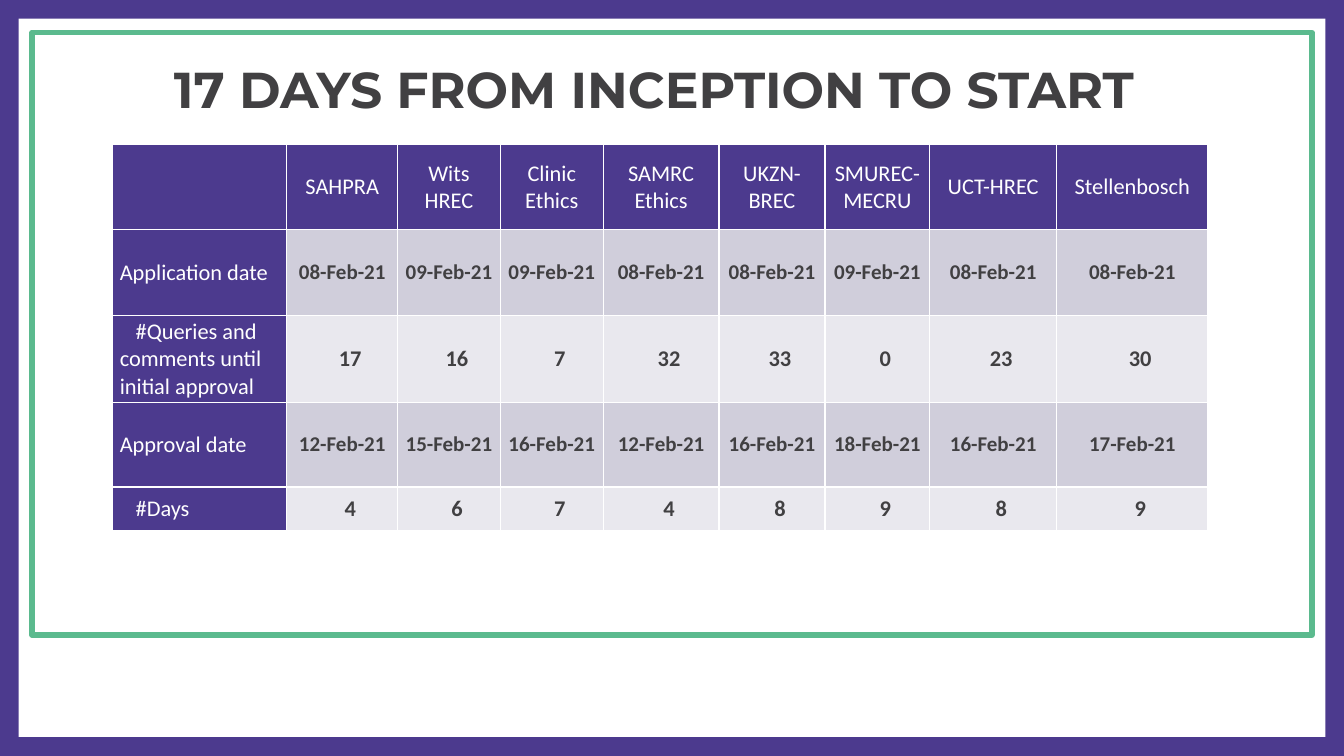
from lxml import etree
from pptx import Presentation
from pptx.dml.color import RGBColor
from pptx.enum.shapes import MSO_SHAPE
from pptx.enum.text import MSO_ANCHOR, PP_ALIGN
from pptx.oxml.ns import qn
from pptx.util import Cm, Pt

RECT = MSO_SHAPE.RECTANGLE
MIDDLE = MSO_ANCHOR.MIDDLE
LEFT, CENTER = PP_ALIGN.LEFT, PP_ALIGN.CENTER

PURPLE = RGBColor(0x4C, 0x3A, 0x8E)
GREEN = RGBColor(0x5B, 0xBA, 0x8E)
WHITE = RGBColor(0xFF, 0xFF, 0xFF)
DARK = RGBColor(0x41, 0x40, 0x42)
BAND_DARK = RGBColor(0xD0, 0xCE, 0xDB)
BAND_LIGHT = RGBColor(0xE9, 0xE8, 0xEE)

# Content
TITLE = "17 DAYS FROM INCEPTION TO START"
ROWS = [
    ["", "SAHPRA", "Wits HREC", "Clinic Ethics", "SAMRC Ethics", "UKZN-BREC",
     "SMUREC- MECRU", "UCT-HREC", "Stellenbosch"],
    ["Application date", "08-Feb-21", "09-Feb-21", "09-Feb-21", "08-Feb-21",
     "08-Feb-21", "09-Feb-21", "08-Feb-21", "08-Feb-21"],
    ["#Queries and comments until initial approval",
     "17", "16", "7", "32", "33", "0", "23", "30"],
    ["Approval date", "12-Feb-21", "15-Feb-21", "16-Feb-21", "12-Feb-21",
     "16-Feb-21", "18-Feb-21", "16-Feb-21", "17-Feb-21"],
    ["#Days", "4", "6", "7", "4", "8", "9", "8", "9"],
]
COL_WIDTHS = [4.39, 2.79, 2.59, 2.59, 2.92, 2.67, 2.64, 3.2, 3.81]
ROW_HEIGHTS = [2.13, 2.18, 2.18, 2.13, 1.09]
CELL_FORMAT = {"vertical_anchor": MIDDLE, "margin_left": Cm(0.18),
               "margin_right": Cm(0.18), "margin_top": 0, "margin_bottom": 0}


def set_all(obj, values):
    for name, value in values.items():
        setattr(obj, name, value)


def set_font(font, color, **values):
    set_all(font, values)
    font.color.rgb = color


def add_panel(s, left, top, width, height):
    sp = s.shapes.add_shape(RECT, Cm(left), Cm(top), Cm(width), Cm(height))
    sp.shadow.inherit = False
    return sp


def add_borders(cell):
    tcPr = cell._tc.get_or_add_tcPr()
    for i, side in enumerate(("a:lnL", "a:lnR", "a:lnT", "a:lnB")):
        ln = etree.Element(qn(side), w=str(Pt(1)))
        fill = etree.SubElement(ln, qn("a:solidFill"))
        etree.SubElement(fill, qn("a:srgbClr"), val=str(WHITE))
        tcPr.insert(i, ln)


def fill_cell(cell, text, row, col):
    is_label = row == 0 or col == 0
    is_count = row in (2, 4)
    set_all(cell, CELL_FORMAT)
    cell.fill.solid()
    cell.fill.fore_color.rgb = (
        PURPLE if is_label else BAND_LIGHT if is_count else BAND_DARK)
    add_borders(cell)
    p = cell.text_frame.paragraphs[0]
    p.alignment = LEFT if col == 0 else CENTER
    if is_count:
        pPr = p._p.get_or_add_pPr()
        pPr.set("marL", "0")
        pPr.set("indent", str(Cm(0.4)))
    if text:
        r = p.add_run()
        r.text = text
        set_font(r.font, WHITE if is_label else DARK, name="Calibri",
                 size=Pt(16 if is_label or is_count else 15), bold=not is_label)


prs = Presentation()
prs.slide_width, prs.slide_height = Cm(33.87), Cm(19.05)
s = prs.slides.add_slide(prs.slide_layouts[5])
s.background.fill.solid()
s.background.fill.fore_color.rgb = PURPLE

# White page and green frame
page = add_panel(s, 0.47, 0.47, 32.93, 18.1)
page.fill.solid()
page.fill.fore_color.rgb = WHITE
page.line.fill.background()

frame = add_panel(s, 0.81, 0.82, 32.25, 15.18)
frame.fill.background()
frame.line.color.rgb = GREEN
frame.line.width = Pt(4)

# Title, brought in front of the page
title = s.shapes.title
s.shapes._spTree.append(title._element)
set_all(title, {"left": Cm(0.58), "top": Cm(1.4),
                "width": Cm(31.8), "height": Cm(1.85)})
tf = title.text_frame
tf.text = TITLE
tf.vertical_anchor = MIDDLE
p = tf.paragraphs[0]
set_all(p, {"alignment": CENTER, "line_spacing": 0.9})
set_font(p.runs[0].font, DARK, name="Montserrat", size=Pt(36), bold=True)

# Approval table
table = s.shapes.add_table(len(ROWS), len(COL_WIDTHS), Cm(2.84), Cm(3.65),
                           Cm(sum(COL_WIDTHS)), Cm(sum(ROW_HEIGHTS))).table
for column, width in zip(table.columns, COL_WIDTHS):
    column.width = Cm(width)
for table_row, height in zip(table.rows, ROW_HEIGHTS):
    table_row.height = Cm(height)
for row, texts in enumerate(ROWS):
    for col, text in enumerate(texts):
        fill_cell(table.cell(row, col), text, row, col)

prs.save("out.pptx")
